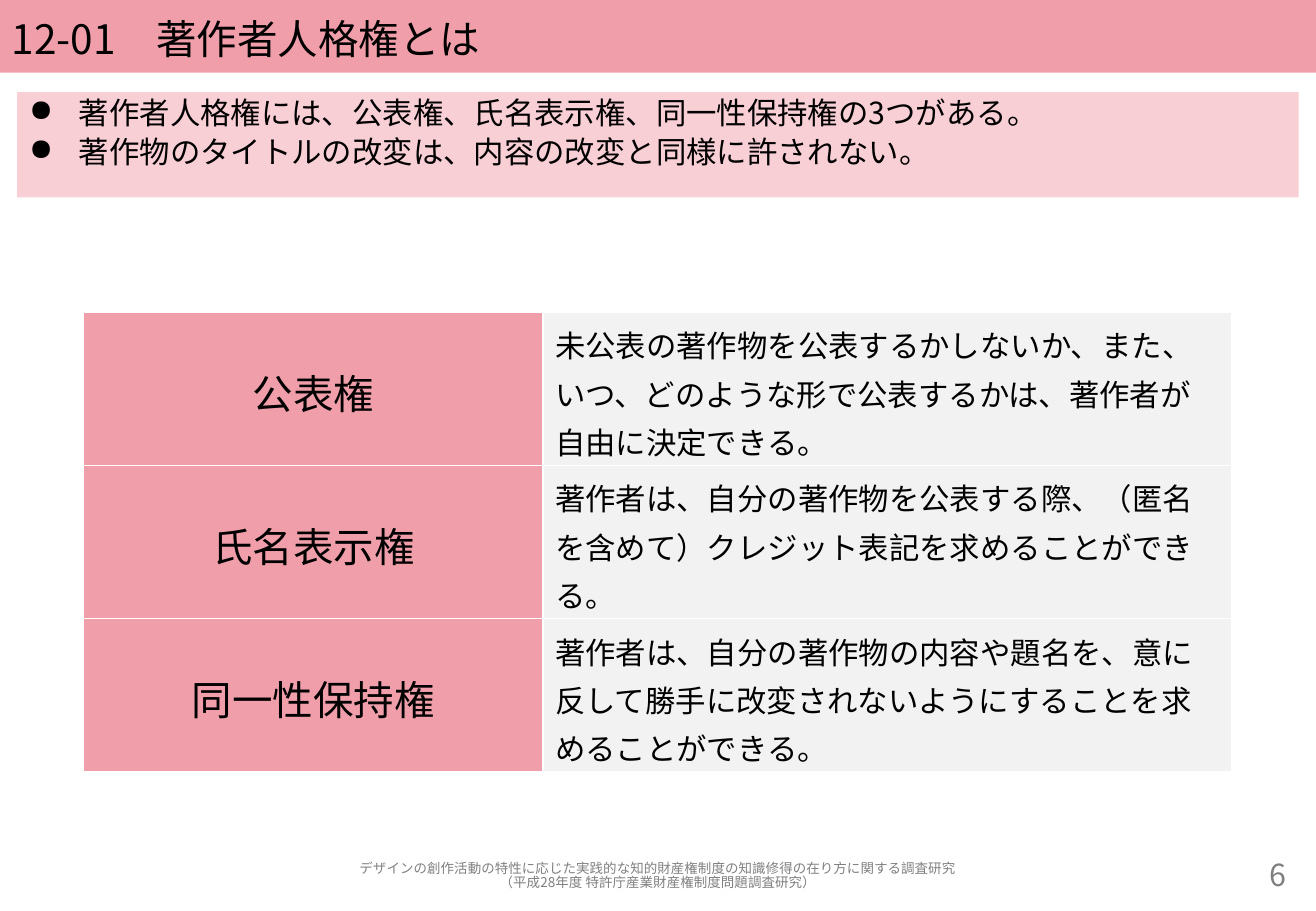
import pptx
import pptx.util
import pptx.dml.color
import pptx.enum.shapes
import pptx.enum.text
import pptx.oxml
import pptx.oxml.ns
import lxml.etree

Cm = pptx.util.Cm
Pt = pptx.util.Pt
ALIGN = pptx.enum.text.PP_ALIGN
MIDDLE = pptx.enum.text.MSO_ANCHOR.MIDDLE
TOP = pptx.enum.text.MSO_ANCHOR.TOP
NOTO = "Noto Sans CJK JP"
PINK, PALE, LIGHT = "F09FAA", "F8CFD5", "F2F2F2"
BLACK, GRAY, WHITE = "000000", "808080", "FFFFFF"
WIDTH, HEIGHT = 27.51, 19.05
EDGE = 0.36

RIGHTS = [
    ("公表権", "未公表の著作物を公表するかしないか、また、いつ、どのような形で公表するかは、著作者が自由に決定できる。"),
    ("氏名表示権", "著作者は、自分の著作物を公表する際、（匿名を含めて）クレジット表記を求めることができる。"),
    ("同一性保持権", "著作者は、自分の著作物の内容や題名を、意に反して勝手に改変されないようにすることを求めることができる。"),
]
POINTS = [
    "著作者人格権には、公表権、氏名表示権、同一性保持権の3つがある。",
    "著作物のタイトルの改変は、内容の改変と同様に許されない。",
]
CREDIT = [
    "デザインの創作活動の特性に応じた実践的な知的財産権制度の知識修得の在り方に関する調査研究",
    "（平成28年度 特許庁産業財産権制度問題調査研究）",
]


def color(code):
    return pptx.dml.color.RGBColor.from_string(code)


def paint(item, code):
    item.fill.solid()
    item.fill.fore_color.rgb = color(code)


def write(frame, lines, size, code=BLACK, align=ALIGN.LEFT, space=1.1, face=NOTO):
    frame.word_wrap = True
    for index, line in enumerate(lines):
        para = frame.paragraphs[0] if index == 0 else frame.add_paragraph()
        para.text = line
        para.alignment = align
        para.line_spacing = space
        font = para.font
        font.name = face
        font.size = Pt(size)
        font.color.rgb = color(code)
        east = lxml.etree.SubElement(font._element, pptx.oxml.ns.qn("a:ea"))
        east.set("typeface", NOTO)


def add_bullet(para):
    para.space_before = Pt(3.6)
    props = para._p.get_or_add_pPr()
    props.set("marL", str(Cm(1.04)))
    props.set("indent", str(-Cm(1.04)))
    mark = pptx.oxml.parse_xml(f'<a:buChar {pptx.oxml.ns.nsdecls("a")} char="●"/>')
    props.find(pptx.oxml.ns.qn("a:defRPr")).addprevious(mark)


def add_band(slide, left, top, width, height, fill, anchor):
    kind = pptx.enum.shapes.MSO_SHAPE.RECTANGLE
    band = slide.shapes.add_shape(kind, Cm(left), Cm(top), Cm(width), Cm(height))
    band.shadow.inherit = False
    paint(band, fill)
    band.line.fill.background()
    band.text_frame.vertical_anchor = anchor
    return band.text_frame


def add_label(slide, left, width, lines, size, align):
    box = slide.shapes.add_textbox(Cm(left), Cm(17.93), Cm(width), Cm(0.79))
    box.text_frame.vertical_anchor = MIDDLE
    write(box.text_frame, lines, size, GRAY, align, 0.9)


def add_border(cell):
    props = cell._tc.get_or_add_tcPr()
    for index, side in enumerate("LRTB"):
        line = pptx.oxml.parse_xml(
            f'<a:ln{side} {pptx.oxml.ns.nsdecls("a")} w="{Pt(1)}"><a:solidFill>'
            f'<a:srgbClr val="{WHITE}"/></a:solidFill></a:ln{side}>')
        props.insert(index, line)


def add_grid(slide):
    widths, tall = (9.6, 14.4), 3.2
    grid = slide.shapes.add_table(len(RIGHTS), len(widths), Cm(1.75), Cm(6.53),
                                  Cm(sum(widths)), Cm(tall * len(RIGHTS))).table
    grid.first_row = False
    grid.horz_banding = False
    for col, width in zip(grid.columns, widths):
        col.width = Cm(width)
    styles = [(PINK, 24, ALIGN.CENTER), (LIGHT, 18, ALIGN.LEFT)]
    for row, texts in zip(grid.rows, RIGHTS):
        row.height = Cm(tall)
        for cell, text, (fill, size, align) in zip(row.cells, texts, styles):
            paint(cell, fill)
            add_border(cell)
            cell.vertical_anchor = MIDDLE
            write(cell.text_frame, [text], size, align=align, face="Arial")


def main():
    deck = pptx.Presentation()
    deck.slide_width, deck.slide_height = Cm(WIDTH), Cm(HEIGHT)
    slide = deck.slides.add_slide(deck.slide_layouts[6])
    inner = WIDTH - 2 * EDGE

    title = add_band(slide, 0, 0, WIDTH, 1.52, PINK, MIDDLE)
    write(title, ["12-01　著作者人格権とは"], 24)

    body = add_band(slide, EDGE, 1.93, inner, 2.2, PALE, TOP)
    write(body, POINTS, 18, space=0.9)
    for para in body.paragraphs:
        add_bullet(para)

    add_label(slide, 23.75, 3.4, ["6"], 18, ALIGN.RIGHT)
    add_grid(slide)
    add_label(slide, EDGE, inner, CREDIT, 8, ALIGN.CENTER)
    deck.save("out.pptx")


if __name__ == "__main__":
    main()
